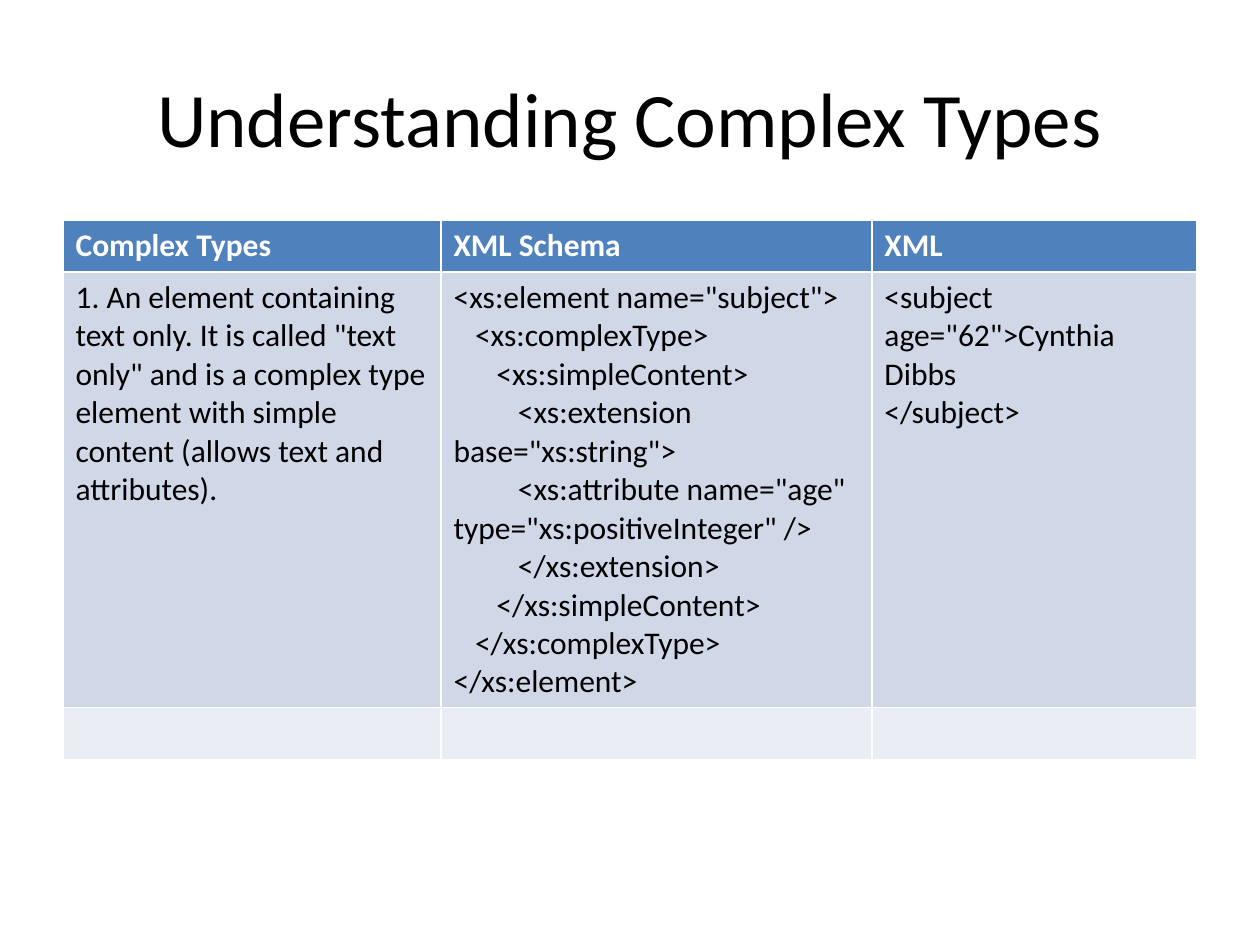
from pptx import Presentation
from pptx import util as u
from pptx.dml.color import RGBColor
from pptx.enum import text

FONT = "Calibri"
HEADERS = ["Complex Types", "XML Schema", "XML"]
DESCRIPTION = ('1. An element containing text only. It is called "text only" and is a '
               'complex type element with simple content (allows text and attributes).')
SCHEMA = [
    (0, '<xs:element name="subject">'),
    (1, '<xs:complexType>'),
    (2, '<xs:simpleContent>'),
    (3, '<xs:extension base="xs:string">'),
    (3, '<xs:attribute name="age" type="xs:positiveInteger" />'),
    (3, '</xs:extension>'),
    (2, '</xs:simpleContent>'),
    (1, '</xs:complexType>'),
    (0, '</xs:element>'),
]
XML = [(0, '<subject age="62">Cynthia Dibbs'), (0, '</subject>')]
ROWS = [
    ("4F81BD", [[(0, h)] for h in HEADERS]),
    ("D0D8E8", [[(0, DESCRIPTION)], SCHEMA, XML]),
    ("E9EDF4", [[], [], []]),
]
COL_WIDTHS = [3, 3.42, 2.58]
ROW_HEIGHTS = [0.41, 3.39, 0.41]
INDENT_STEP = 0.17


def rgb(value):
    return RGBColor.from_string(value)


def write(tf, lines, size=18, color="000000", bold=False, align=None):
    for i, (depth, line) in enumerate(lines):
        p = tf.paragraphs[0] if i == 0 else tf.add_paragraph()
        p.alignment = align
        if depth:
            pPr = p._p.get_or_add_pPr()
            pPr.set("marL", "0")
            pPr.set("indent", str(u.Inches(depth * INDENT_STEP)))
        r = p.add_run()
        r.text = line
        r.font.name = FONT
        r.font.size = u.Pt(size)
        r.font.bold = bold
        r.font.color.rgb = rgb(color)


def add_title(s, x, y, w, h):
    sp = s.shapes.title
    sp.left, sp.top, sp.width, sp.height = (u.Inches(v) for v in (x, y, w, h))
    tf = sp.text_frame
    tf.vertical_anchor = text.MSO_ANCHOR.MIDDLE
    write(tf, [(0, "Understanding Complex Types")], size=44,
          align=text.PP_ALIGN.CENTER)


def add_types_table(s, x, y, w, h):
    box = [u.Inches(v) for v in (x, y, w, h)]
    table = s.shapes.add_table(len(ROWS), len(COL_WIDTHS), *box).table
    for col, width in zip(table.columns, COL_WIDTHS):
        col.width = u.Inches(width * w / sum(COL_WIDTHS))
    for row, height in zip(table.rows, ROW_HEIGHTS):
        row.height = u.Inches(height * h / sum(ROW_HEIGHTS))
    for i, (fill, contents) in enumerate(ROWS):
        header = i == 0
        for cell, lines in zip(table.rows[i].cells, contents):
            cell.fill.solid()
            cell.fill.fore_color.rgb = rgb(fill)
            write(cell.text_frame, lines, bold=header,
                  color="FFFFFF" if header else "000000")


def main():
    prs = Presentation()
    prs.slide_width, prs.slide_height = u.Inches(10), u.Inches(7.5)
    s = prs.slides.add_slide(prs.slide_layouts[5])
    add_title(s, 0.5, 0.3, 9, 1.25)
    add_types_table(s, 0.5, 1.75, 9, 4.21)
    prs.save("out.pptx")


if __name__ == "__main__":
    main()
